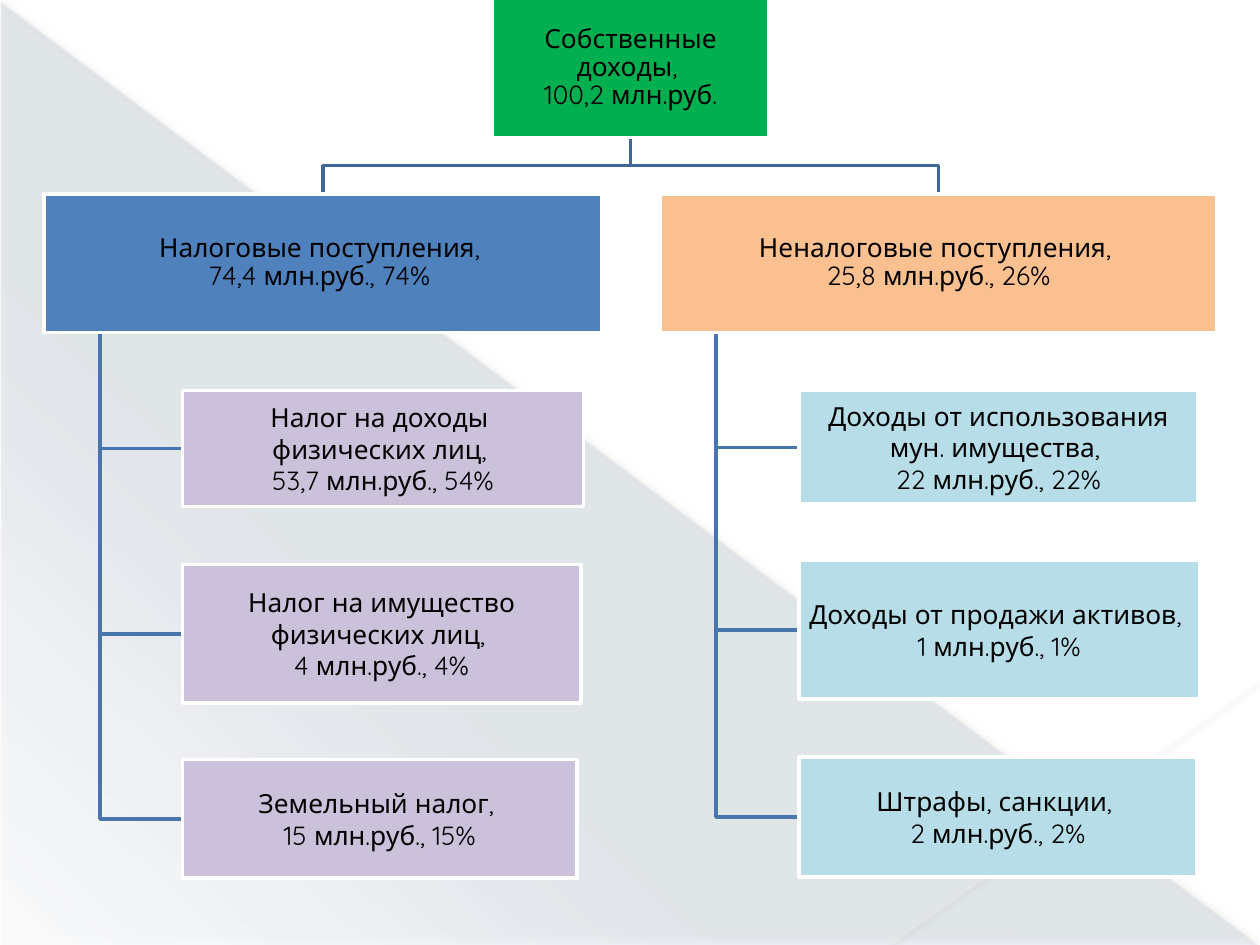
from lxml.etree import SubElement
from pptx import Presentation
from pptx.dml.color import RGBColor
from pptx.enum.shapes import MSO_CONNECTOR as Connector, MSO_SHAPE as Shape
from pptx.enum.text import MSO_ANCHOR as Anchor, PP_ALIGN as Align
from pptx.oxml.ns import qn
from pptx.util import Inches, Pt

WHITE = RGBColor(0xFF, 0xFF, 0xFF)
BLACK = RGBColor(0x00, 0x00, 0x00)
NAVY = RGBColor(0x1F, 0x49, 0x7D)
CREAM = RGBColor(0xF9, 0xF7, 0xEC)
PALE_CREAM = RGBColor(0xFA, 0xF8, 0xEE)
GREEN = RGBColor(0x00, 0xB0, 0x50)
BLUE = RGBColor(0x4F, 0x81, 0xBD)
ORANGE = RGBColor(0xFA, 0xC0, 0x90)
LILAC = RGBColor(0xCC, 0xC1, 0xDA)
AQUA = RGBColor(0xB7, 0xDE, 0xE8)
TOP_LINK = RGBColor(0x3F, 0x67, 0x97)
SIDE_LINK = RGBColor(0x48, 0x75, 0xAC)

FONT = {"name": "Quicksand", "size": Pt(15)}
MARGINS = dict.fromkeys(
    ("margin_left", "margin_top", "margin_right", "margin_bottom"), Inches(0.01))
FRAME = {"word_wrap": True, "vertical_anchor": Anchor.MIDDLE, **MARGINS}

ROOT = ((3.91, -0.01, 2.19, 1.1), GREEN, ["Собственные доходы, ", "100,2 млн.руб."])
BRANCHES = [
    (((0.35, 1.54, 4.43, 1.1), BLUE,
      ["Налоговые поступления, ", "74,4 млн.руб., 74% "]), LILAC, [
        ((1.45, 3.1, 3.18, 0.92),
         ["Налог на доходы ", "физических лиц, ", "53,7 млн.руб., 54%"]),
        ((1.45, 4.48, 3.16, 1.1),
         ["Налог на имущество физических лиц, ", "4 млн.руб., 4%"]),
        ((1.45, 6.03, 3.13, 0.94), ["Земельный налог, ", "15 млн.руб., 15%"]),
    ]),
    (((5.24, 1.54, 4.42, 1.1), ORANGE,
      ["Неналоговые поступления, ", "25,8 млн.руб., 26%"]), AQUA, [
        ((6.34, 3.1, 3.17, 0.9),
         ["Доходы от использования мун. имущества, ", "22 млн.руб., 22%"]),
        ((6.34, 4.45, 3.18, 1.1), ["Доходы от продажи активов, ", "1 млн.руб., 1%"]),
        ((6.34, 6.01, 3.16, 0.95), ["Штрафы, санкции, ", "2 млн.руб., 2%"]),
    ]),
]


def apply_format(target, values):
    """Set every attribute in the dict on the target."""
    for name, value in values.items():
        setattr(target, name, value)


def set_alpha(color, percent):
    """Give an srgbClr element an opacity."""
    SubElement(color, qn("a:alpha"), val=str(percent * 1000))


def add_shadow(shape, opacity, blur, distance, angle):
    """Add an outer black shadow to a shape or connector."""
    effects = SubElement(shape._element.spPr, qn("a:effectLst"))
    outer = SubElement(effects, qn("a:outerShdw"), blurRad=str(Pt(blur)),
                       dist=str(Pt(distance)), dir=str(angle * 60000),
                       algn="tl", rotWithShape="0")
    set_alpha(SubElement(outer, qn("a:srgbClr"), val=str(BLACK)), opacity)


def add_backdrop(slide):
    """Add the large translucent triangle."""
    box = [Inches(value) for value in (0.01, 0.02, 9.98, 7.48)]
    triangle = slide.shapes.add_shape(Shape.RIGHT_TRIANGLE, *box)
    triangle.fill.gradient()
    triangle.fill.gradient_angle = 360 - 133
    stops = triangle._element.spPr.find(".//" + qn("a:gsLst"))
    for stop in list(stops):
        stops.remove(stop)
    for position, opacity in ((0, 10), (70, 8), (100, 1)):
        stop = SubElement(stops, qn("a:gs"), pos=str(position * 1000))
        set_alpha(SubElement(stop, qn("a:srgbClr"), val=str(NAVY)), opacity)
    triangle.line.fill.background()
    add_shadow(triangle, 50, 5, 2, 245)


def add_ray(slide, points, color, width, opacity):
    """Add a thin translucent background line."""
    ray = slide.shapes.add_connector(
        Connector.STRAIGHT, *[Inches(value) for value in points])
    ray.line.color.rgb = color
    ray.line.width = Pt(width)
    set_alpha(ray._element.spPr.find(".//" + qn("a:srgbClr")), opacity)
    add_shadow(ray, 38, 3.1, 1.6, 90)


def add_link(slide, points, color):
    """Add an open angular line through the points."""
    start, *others = [(Inches(x), Inches(y)) for x, y in points]
    builder = slide.shapes.build_freeform(*start)
    builder.add_line_segments(others, close=False)
    link = builder.convert_to_shape()
    link.shadow.inherit = False
    link.fill.background()
    link.line.color.rgb = color
    link.line.width = Pt(2)


def add_box(slide, box, color, lines, spacing=1.0):
    """Add a filled box with one centred paragraph per line."""
    shape = slide.shapes.add_shape(Shape.RECTANGLE, *[Inches(value) for value in box])
    shape.shadow.inherit = False
    shape.fill.solid()
    shape.fill.fore_color.rgb = color
    shape.line.color.rgb = WHITE
    shape.line.width = Pt(2)
    frame = shape.text_frame
    apply_format(frame, FRAME)
    for index, line in enumerate(lines):
        paragraph = frame.add_paragraph() if index else frame.paragraphs[0]
        apply_format(paragraph, {"alignment": Align.CENTER, "line_spacing": spacing})
        run = paragraph.add_run()
        run.text = line
        apply_format(run.font, FONT)
        run.font.color.rgb = BLACK


def add_branch_links(slide, root_box, branch_box, leaves):
    """Link the root to a branch and the branch to its leaves."""
    root_left, root_top, root_width, root_height = root_box
    left, top, width, height = branch_box
    root_x, root_y = root_left + root_width / 2, root_top + root_height
    middle_x, middle_y = left + width / 2, (root_y + top) / 2
    trunk_x, trunk_y = left + width / 10, top + height
    for (leaf_left, leaf_top, _, leaf_height), _ in reversed(leaves):
        leaf_y = leaf_top + leaf_height / 2
        add_link(slide, [(trunk_x, trunk_y), (trunk_x, leaf_y), (leaf_left, leaf_y)],
                 SIDE_LINK)
    add_link(slide, [(root_x, root_y), (root_x, middle_y), (middle_x, middle_y),
                     (middle_x, top)], TOP_LINK)


def main():
    """Build the income structure slide."""
    presentation = Presentation()
    apply_format(presentation, {"slide_width": Inches(10), "slide_height": Inches(7.5)})
    slide = presentation.slides.add_slide(presentation.slide_layouts[6])
    add_backdrop(slide)
    add_ray(slide, (0, 0.01, 9.99, 7.49), CREAM, 0.4, 35)
    add_ray(slide, (10, 5.41, 7.07, 7.49), PALE_CREAM, 0.48, 45)
    for branch, _, leaves in reversed(BRANCHES):
        add_branch_links(slide, ROOT[0], branch[0], leaves)
    add_box(slide, *ROOT, spacing=0.9)
    for branch, leaf_color, leaves in BRANCHES:
        add_box(slide, *branch, spacing=0.9)
        for box, lines in leaves:
            add_box(slide, box, leaf_color, lines)
    presentation.save("out.pptx")


if __name__ == "__main__":
    main()
